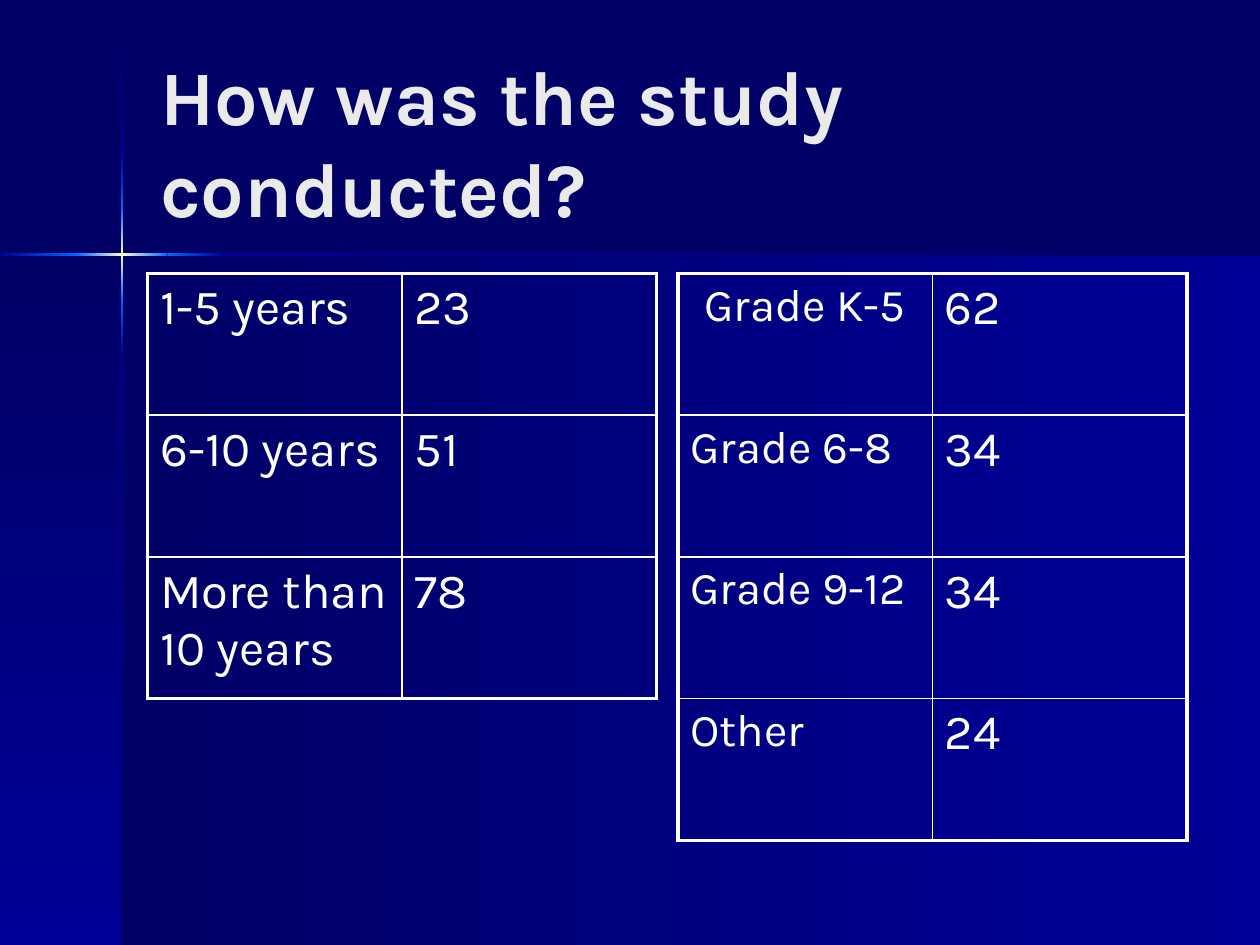
from copy import deepcopy
from itertools import pairwise

from lxml import etree
from pptx import Presentation
from pptx.dml.color import RGBColor
from pptx.enum.shapes import MSO_SHAPE
from pptx.enum.text import MSO_ANCHOR, MSO_AUTO_SIZE, PP_ALIGN
from pptx.oxml.ns import qn
from pptx.util import Inches, Pt

RECTANGLE = MSO_SHAPE.RECTANGLE
MIDDLE = MSO_ANCHOR.MIDDLE
NO_FIT = MSO_AUTO_SIZE.NONE
LEFT, CENTER = PP_ALIGN.LEFT, PP_ALIGN.CENTER

COLORS = {
    "navy": "000066", "blue": "000099", "bright": "0066FF",
    "glow": "FFFFCC", "title": "EAEAEA", "white": "FFFFFF",
}
FONT = "Karla"
WIDTH, HEIGHT = 10, 7.5
CROSS_X, CROSS_Y = 0.97, 2.02       # where the two light beams meet
BEAM = 0.02                         # beam thickness
COLUMN, ROW = 2.02, 1.125           # table grid
TABLE_TOP = 2.17
OUTER, INNER = 2.25, 1              # border widths in points

# Colours along a beam, one entry for each segment
BEAM_COLORS = [
    ("navy", "blue"), ("blue", "bright"), ("bright", "glow", "bright"),
    ("bright", "blue"), ("blue", "navy"),
]

YEARS = [("1-5 years", "23"), ("6-10 years", "51"), ("More than 10 years", "78")]
GRADES = [("Grade K-5", "62"), ("Grade 6-8", "34"), ("Grade 9-12", "34"), ("Other", "24")]


def rgb(name):
    return RGBColor.from_string(COLORS[name])


def apply_format(target, values):
    for name, value in values.items():
        setattr(target, name, value)


def format_text(span, size, color, bold=False):
    apply_format(span.font, {"name": FONT, "size": Pt(size), "bold": bold})
    span.font.color.rgb = rgb(color)


def add_gradient_box(page, box, names, downward):
    shape = page.shapes.add_shape(RECTANGLE, *map(Inches, box))
    shape.shadow.inherit = False
    shape.line.fill.background()
    shape.fill.gradient()
    shape.fill.gradient_angle = 270 if downward else 0
    stop_list = shape._element.spPr.find(".//" + qn("a:gsLst"))
    for _ in names[2:]:
        stop_list.append(deepcopy(stop_list[0]))
    for index, (stop, name) in enumerate(zip(shape.fill.gradient_stops, names)):
        stop.position = index / (len(names) - 1)
        stop.color.rgb = rgb(name)


def add_beam(page, edges, center, downward):
    """A beam made of consecutive segments between the given edges."""
    colors = BEAM_COLORS[-(len(edges) - 1):]
    side = center - BEAM / 2
    for (start, end), names in zip(pairwise(edges), colors):
        if downward:
            box = (side, start, BEAM, end - start)
        else:
            box = (start, side, end - start, BEAM)
        add_gradient_box(page, box, names, downward)


def add_backdrop(page):
    page.background.fill.solid()
    page.background.fill.fore_color.rgb = rgb("navy")
    panel = ("navy", "blue")
    depth = HEIGHT - CROSS_Y
    add_gradient_box(page, (CROSS_X, CROSS_Y, WIDTH - CROSS_X, depth), panel, False)
    add_gradient_box(page, (0, CROSS_Y, CROSS_X, depth), panel, True)
    add_beam(page, [0.01, 1.21, 1.65, 2.38, 2.82, HEIGHT], CROSS_X, True)
    add_beam(page, [0, 0.61, 1.33, 1.77, WIDTH], CROSS_Y, False)


def add_title(page, box, text):
    title = page.shapes.title
    apply_format(title, dict(zip(("left", "top", "width", "height"), map(Inches, box))))
    frame = title.text_frame
    apply_format(frame, {"word_wrap": True, "vertical_anchor": MIDDLE, "auto_size": NO_FIT})
    para = frame.paragraphs[0]
    para.alignment = LEFT
    span = para.add_run()
    span.text = text
    format_text(span, 44, "title", bold=True)
    # Bring the title in front of the backdrop
    page.shapes._spTree.append(title._element)


def set_borders(cell, widths):
    properties = cell._tc.get_or_add_tcPr()
    for side, width in widths.items():
        line = etree.SubElement(properties, qn(f"a:ln{side}"), w=str(Pt(width)))
        fill = etree.SubElement(line, qn("a:solidFill"))
        etree.SubElement(fill, qn("a:srgbClr"), val=COLORS["white"])


def fill_cell(cell, text, size, alignment):
    para = cell.text_frame.paragraphs[0]
    para.alignment = alignment
    spacing = etree.Element(qn("a:spcBef"))
    etree.SubElement(spacing, qn("a:spcPct"), val="20000")
    para._p.get_or_add_pPr().insert(0, spacing)
    span = para.add_run()
    span.text = text
    format_text(span, size, "white")


def add_count_table(page, left, top, rows, label_size, first_alignment=LEFT):
    last_row, last_column = len(rows) - 1, len(rows[0]) - 1
    size = (COLUMN * len(rows[0]), ROW * len(rows))
    table = page.shapes.add_table(
        len(rows), len(rows[0]), *map(Inches, (left, top, *size))).table
    apply_format(table, {"first_row": False, "horz_banding": False})
    for r, values in enumerate(rows):
        for c, text in enumerate(values):
            cell = table.cell(r, c)
            set_borders(cell, {
                "L": OUTER if c == 0 else INNER,
                "R": OUTER if c == last_column else INNER,
                "T": OUTER if r == 0 else INNER,
                "B": OUTER if r == last_row else INNER,
            })
            cell.fill.background()
            fill_cell(cell, text, label_size if c == 0 else 28,
                      first_alignment if r == c == 0 else LEFT)


def main():
    deck = Presentation()
    apply_format(deck, {"slide_width": Inches(WIDTH), "slide_height": Inches(HEIGHT)})
    page = deck.slides.add_slide(deck.slide_layouts.get_by_name("Title Only"))
    add_backdrop(page)
    add_title(page, (1.17, 0.33, 8.25, 1.57), "How was the study conducted?")
    # Grade levels on the right, years of experience on the left
    add_count_table(page, 5.38, TABLE_TOP, GRADES, 26, CENTER)
    add_count_table(page, 1.17, TABLE_TOP, YEARS, 28)
    deck.save("out.pptx")


if __name__ == "__main__":
    main()
